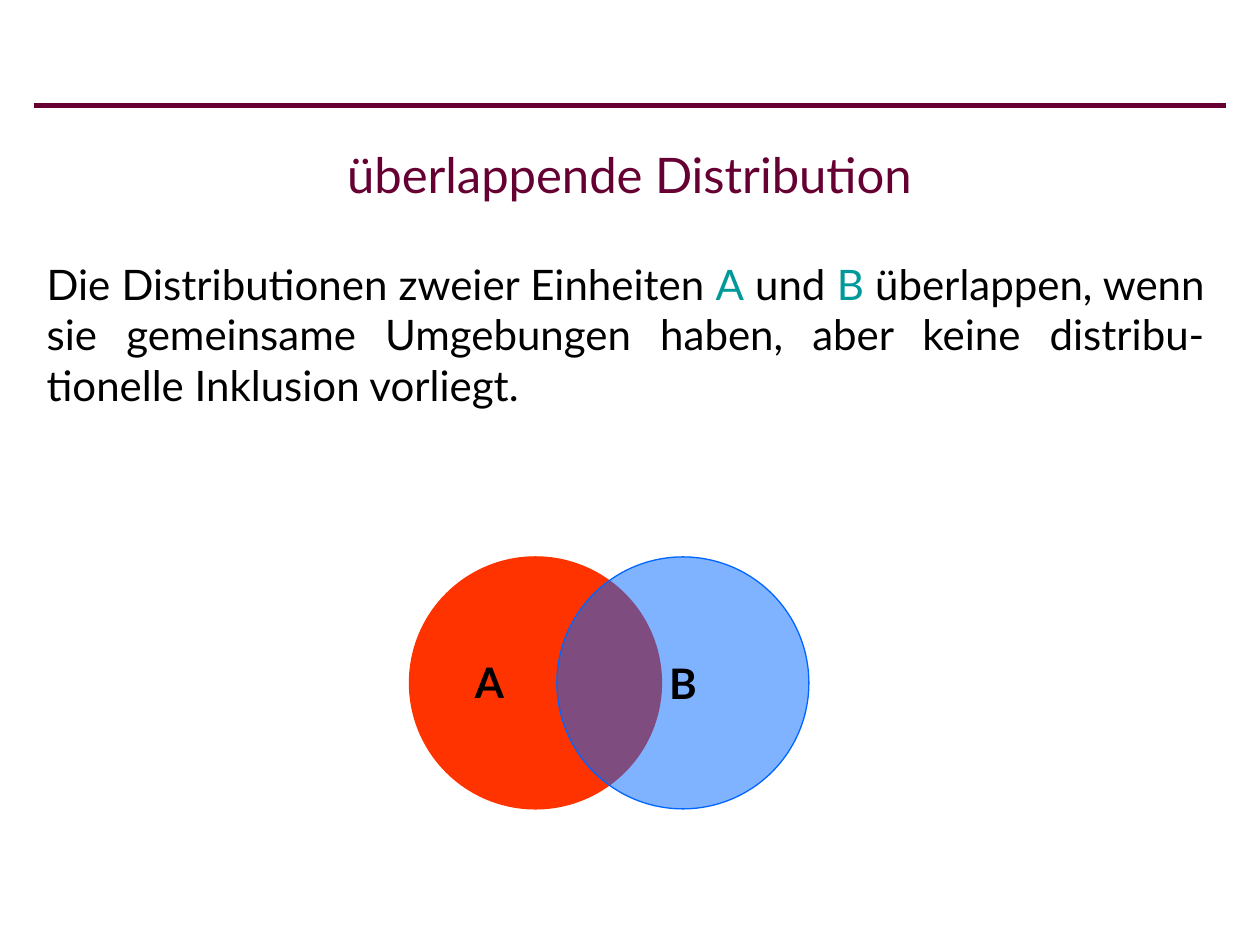
import pptx
import pptx.util
import pptx.dml.color
import pptx.enum.shapes
import pptx.enum.text
from lxml import etree

Pt = pptx.util.Pt
Align = pptx.enum.text.PP_ALIGN
Anchor = pptx.enum.text.MSO_ANCHOR
Fit = pptx.enum.text.MSO_AUTO_SIZE

# Content
FONT = "Lato"
PLUM, TEAL, BLACK, RED, BLUE = "660033", "009999", "000000", "FF3300", "0066FF"
TITLE = [("überlappende Distribution", PLUM)]
DEFINITION = [
    ("Die Distributionen zweier Einheiten ", BLACK),
    ("A", TEAL),
    (" und ", BLACK),
    ("B ", TEAL),
    ("überlappen, wenn sie gemeinsame Umgebungen haben, "
     "aber keine distribu-tionelle Inklusion vorliegt.", BLACK),
]
# Circles: left edge, colour, opacity in percent
CIRCLES = {"A": (234, RED, 100), "B": (318.24, BLUE, 50)}
CIRCLE_TOP, DIAMETER = 318.24, 144
LABEL_A = (264.24, 371.52, 30.96, 36)
RULE_LEFT, RULE_RIGHT, RULE_TOP = 19.44, 700.56, 60.48


def color(target, value):
    target.rgb = pptx.dml.color.RGBColor.from_string(value)


def place(shape, left, top, width, height):
    shape.left, shape.top = Pt(left), Pt(top)
    shape.width, shape.height = Pt(width), Pt(height)


def write(shape, spans, size, align, anchor, bold=False, wrap=True):
    frame = shape.text_frame
    frame.auto_size = Fit.NONE
    frame.word_wrap = wrap
    frame.vertical_anchor = anchor
    para = frame.paragraphs[0]
    para.alignment = align
    para.space_before = Pt(0)
    for text, tint in spans:
        span = para.add_run()
        span.text = text
        span.font.name = FONT
        span.font.size = Pt(size)
        span.font.bold = bold
        color(span.font.color, tint)
    return para


def add_circle(page, left, tint, opacity):
    circle = page.shapes.add_shape(
        pptx.enum.shapes.MSO_SHAPE.OVAL,
        Pt(left), Pt(CIRCLE_TOP), Pt(DIAMETER), Pt(DIAMETER))
    circle.shadow.inherit = False
    circle.fill.solid()
    color(circle.fill.fore_color, tint)
    color(circle.line.color, tint)
    circle.line.width = Pt(0.75)
    if opacity < 100:
        fill = circle._element.spPr.find(pptx.oxml.ns.qn("a:solidFill"))
        etree.SubElement(fill[0], pptx.oxml.ns.qn("a:alpha"), val=str(opacity * 1000))
    return circle


deck = pptx.Presentation()
deck.slide_width, deck.slide_height = Pt(720), Pt(540)
page = deck.slides.add_slide(deck.slide_layouts[1])

# Rule above the title
rule = page.shapes.add_connector(
    pptx.enum.shapes.MSO_CONNECTOR.STRAIGHT,
    Pt(RULE_LEFT), Pt(RULE_TOP), Pt(RULE_RIGHT), Pt(RULE_TOP))
color(rule.line.color, PLUM)
rule.line.width = Pt(3)
etree.SubElement(rule._element.spPr, pptx.oxml.ns.qn("a:effectLst"))

# Title and definition
title, body = page.shapes.title, page.placeholders[1]
place(title, RULE_LEFT, RULE_TOP, 680.4, 77.76)
write(title, TITLE, 28, Align.CENTER, Anchor.MIDDLE)
place(body, RULE_LEFT, 144, 676.08, 120.24)
para = write(body, DEFINITION, 24, Align.JUSTIFY, Anchor.TOP)
properties = para._p.get_or_add_pPr()
properties.set("marL", "0")
properties.set("indent", "0")
etree.SubElement(properties, pptx.oxml.ns.qn("a:buNone"))

# Overlapping circles, with A's label clear of the overlap
add_circle(page, *CIRCLES["A"])
label = page.shapes.add_textbox(*map(Pt, LABEL_A))
write(label, [("A", BLACK)], 24, Align.JUSTIFY, Anchor.TOP, bold=True, wrap=False)
circle_b = add_circle(page, *CIRCLES["B"])
write(circle_b, [("B", BLACK)], 24, Align.CENTER, Anchor.MIDDLE, bold=True, wrap=False)

deck.save("out.pptx")
